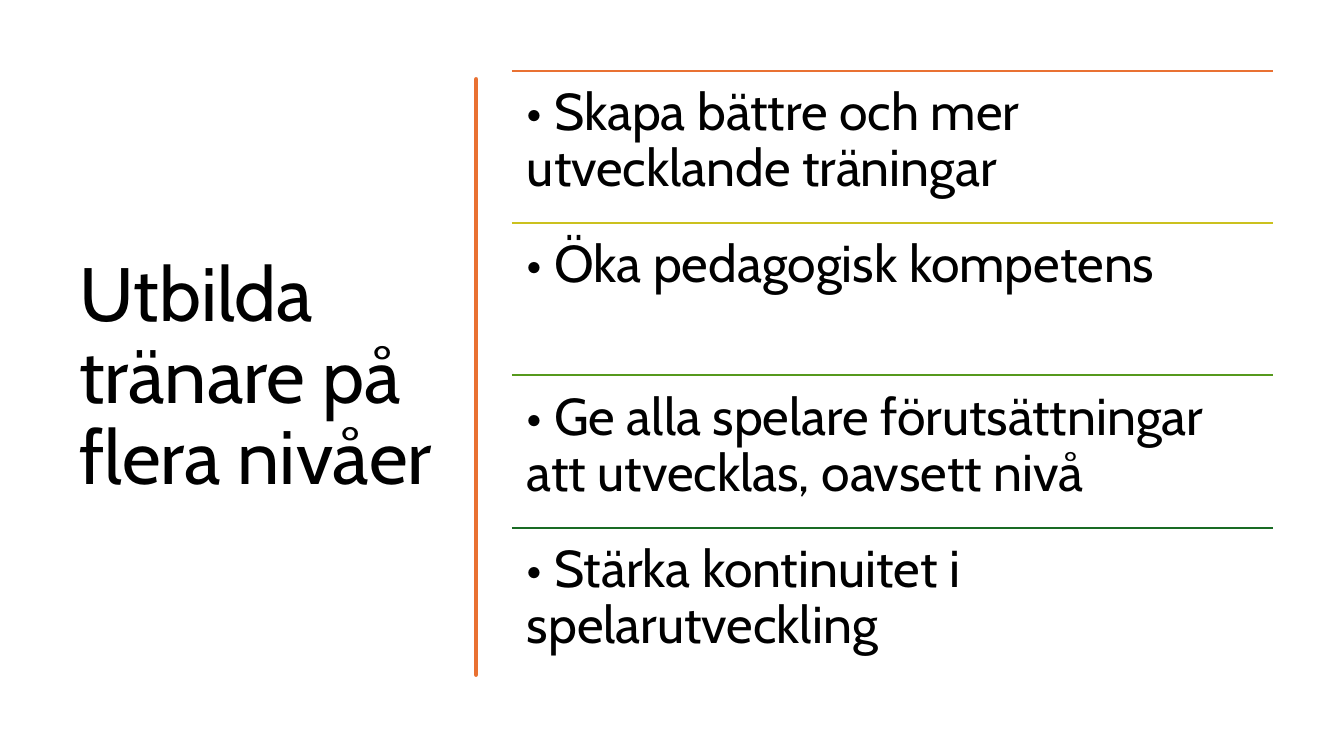
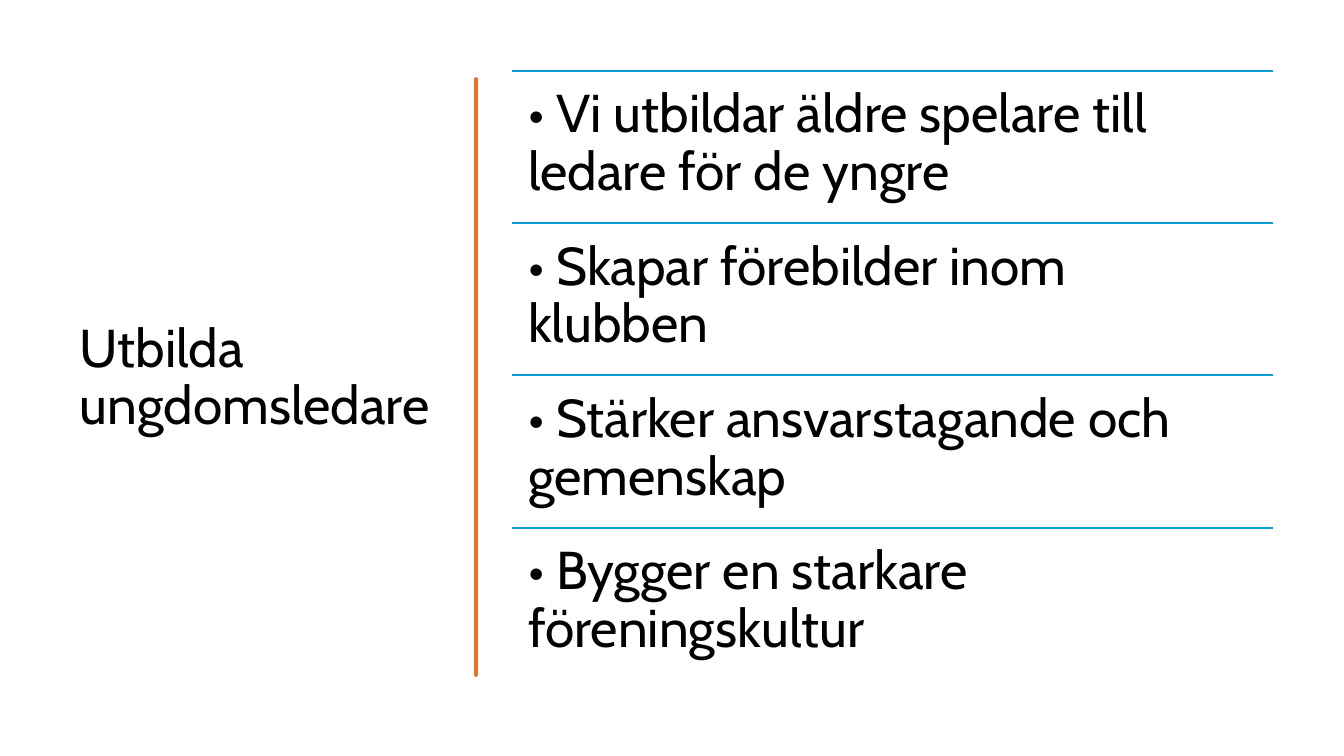
from dataclasses import dataclass

import pptx
import pptx.dml.color
import pptx.enum.shapes
import pptx.enum.text
import pptx.oxml
import pptx.oxml.ns
import pptx.slide
import pptx.text.text
import pptx.util

Cm = pptx.util.Cm
Pt = pptx.util.Pt
Color = pptx.dml.color.RGBColor


@dataclass(frozen=True)
class Theme:
    font: str = "Cabin"
    text: str = "000000"
    background: str = "FFFFFF"
    orange: str = "E97132"
    yellow: str = "CBC11E"
    lime: str = "56991D"
    green: str = "196B24"
    blue: str = "0F9ED5"
    title_large: int = 54
    title_small: int = 38
    body_large: int = 38
    body_small: int = 37
    rule_width: float = 1.5
    brush_width: float = 3.25
    line_spacing: float = 0.9


@dataclass(frozen=True)
class Bend:
    first_offset: float
    first_y: float
    second_offset: float
    second_y: float
    end_y: float


@dataclass(frozen=True)
class Row:
    text: str
    color: str


@dataclass(frozen=True)
class Topic:
    title: str
    title_size: int
    body_size: int
    inset: float
    rows: tuple[Row, ...]


THEME = Theme()

CONTENT_TOP = 1.78
TITLE_LEFT, TITLE_WIDTH, TITLE_HEIGHT = 1.75, 9.5, 15.52
ROW_LEFT, ROW_WIDTH, ROW_HEIGHT = 12.9, 19.18, 3.84

BRUSH_TOP, BRUSH_BOTTOM = 2.13, 17.17
BRUSH_LEFT, BRUSH_RIGHT = 12.01, 12.06
CURVE_STEPS = 8
RIGHT_EDGE = (
    Bend(0.05, 2.59, 0.05, 3.02, 3.71),
    Bend(-0.05, 4.39, 0.03, 4.95, 5.74),
    Bend(-0.03, 6.53, 0, 6.65, 7.47),
    Bend(-0.03, 8.26, 0.05, 8.69, 9.04),
    Bend(-0.05, 9.4, 0.1, 10.52, 11.07),
    Bend(-0.1, 11.61, -0.08, 12.29, 12.95),
    Bend(0.05, 13.61, 0.05, 14.33, 14.83),
    Bend(-0.05, 15.32, 0.03, 16.51, BRUSH_BOTTOM),
)
LEFT_EDGE = (
    Bend(0.03, 16.41, -0.05, 16.36, 15.57),
    Bend(0.03, 14.81, 0.03, 14.48, 14.15),
    Bend(-0.03, 13.82, 0, 12.57, 12.12),
    Bend(0, 11.66, -0.05, 11.3, 10.54),
    Bend(0.03, 9.8, -0.03, 9.47, 8.51),
    Bend(0.03, 7.57, -0.03, 7.14, 6.35),
    Bend(0.03, 5.54, 0.05, 5.08, 4.6),
    Bend(-0.08, 4.14, 0.1, 2.64, BRUSH_TOP),
)

TOPICS = (
    Topic(
        "Utbilda tränare på flera nivåer", THEME.title_large, THEME.body_small, 0.38,
        (
            Row("• Skapa bättre och mer utvecklande träningar", THEME.orange),
            Row("• Öka pedagogisk kompetens", THEME.yellow),
            Row("• Ge alla spelare förutsättningar att utvecklas, oavsett nivå", THEME.lime),
            Row("• Stärka kontinuitet i spelarutveckling", THEME.green),
        ),
    ),
    Topic(
        "Utbilda ungdomsledare", THEME.title_small, THEME.body_large, 0.41,
        (
            Row("• Vi utbildar äldre spelare till ledare för de yngre", THEME.blue),
            Row("• Skapar förebilder inom klubben", THEME.blue),
            Row("• Stärker ansvarstagande och gemenskap", THEME.blue),
            Row("• Bygger en starkare föreningskultur", THEME.blue),
        ),
    ),
)


def write_text(frame: pptx.text.text.TextFrame, text: str, size: int) -> None:
    frame.word_wrap = True
    frame.auto_size = pptx.enum.text.MSO_AUTO_SIZE.NONE
    frame.text = text
    para = frame.paragraphs[0]
    para.alignment = pptx.enum.text.PP_ALIGN.LEFT
    para.line_spacing = THEME.line_spacing
    para.font.name = THEME.font
    para.font.size = Pt(size)
    para.font.color.rgb = Color.from_string(THEME.text)


def add_title(page: pptx.slide.Slide, text: str, size: int) -> None:
    title = page.shapes.title
    title.left, title.top = Cm(TITLE_LEFT), Cm(CONTENT_TOP)
    title.width, title.height = Cm(TITLE_WIDTH), Cm(TITLE_HEIGHT)
    write_text(title.text_frame, text, size)
    title.text_frame.vertical_anchor = pptx.enum.text.MSO_ANCHOR.MIDDLE


def trace_edge(edge_x: float, start_y: float, bends: tuple[Bend, ...]) -> list[tuple[float, float]]:
    points = []
    for bend in bends:
        for step in range(1, CURVE_STEPS + 1):
            after = step / CURVE_STEPS
            before = 1 - after
            first = 3 * before**2 * after
            second = 3 * before * after**2
            x = edge_x + first * bend.first_offset + second * bend.second_offset
            y = (before**3 * start_y + first * bend.first_y
                 + second * bend.second_y + after**3 * bend.end_y)
            points.append((x, y))
        start_y = bend.end_y
    return points


def add_brush_stroke(page: pptx.slide.Slide) -> None:
    builder = page.shapes.build_freeform(BRUSH_RIGHT, BRUSH_TOP, scale=Cm(1))
    builder.add_line_segments(
        trace_edge(BRUSH_RIGHT, BRUSH_TOP, RIGHT_EDGE)
        + [(BRUSH_LEFT, BRUSH_BOTTOM)]
        + trace_edge(BRUSH_LEFT, BRUSH_BOTTOM, LEFT_EDGE),
        close=True,
    )
    brush = builder.convert_to_shape()
    brush.shadow.inherit = False
    brush.fill.solid()
    brush.fill.fore_color.rgb = Color.from_string(THEME.orange)
    brush.line.color.rgb = Color.from_string(THEME.orange)
    brush.line.width = Pt(THEME.brush_width)
    outline = brush.element.spPr.find(pptx.oxml.ns.qn("a:ln"))
    outline.append(pptx.oxml.parse_xml(f"<a:round {pptx.oxml.ns.nsdecls('a')}/>"))


def add_rule(page: pptx.slide.Slide, top: float, color: str) -> None:
    rule = page.shapes.add_connector(
        pptx.enum.shapes.MSO_CONNECTOR.STRAIGHT,
        Cm(ROW_LEFT), Cm(top), Cm(ROW_LEFT + ROW_WIDTH), Cm(top),
    )
    rule.line.color.rgb = Color.from_string(color)
    rule.line.width = Pt(THEME.rule_width)
    rule.element.spPr.append(pptx.oxml.parse_xml(f"<a:effectLst {pptx.oxml.ns.nsdecls('a')}/>"))


def add_row(page: pptx.slide.Slide, row: Row, top: float, size: int, inset: float) -> None:
    add_rule(page, top, row.color)
    box = page.shapes.add_textbox(Cm(ROW_LEFT), Cm(top), Cm(ROW_WIDTH), Cm(ROW_HEIGHT))
    frame = box.text_frame
    frame.margin_left = frame.margin_right = Cm(inset)
    frame.margin_top = frame.margin_bottom = Cm(inset)
    write_text(frame, row.text, size)


def main() -> None:
    deck = pptx.Presentation()
    deck.slide_width, deck.slide_height = Cm(33.87), Cm(19.05)
    background = deck.slide_master.background.fill
    background.solid()
    background.fore_color.rgb = Color.from_string(THEME.background)
    title_only = deck.slide_layouts.get_by_name("Title Only")
    for topic in TOPICS:
        page = deck.slides.add_slide(title_only)
        add_title(page, topic.title, topic.title_size)
        add_brush_stroke(page)
        for index, row in enumerate(topic.rows):
            add_row(page, row, CONTENT_TOP + index * ROW_HEIGHT, topic.body_size, topic.inset)
    deck.save("out.pptx")


if __name__ == "__main__":
    main()
